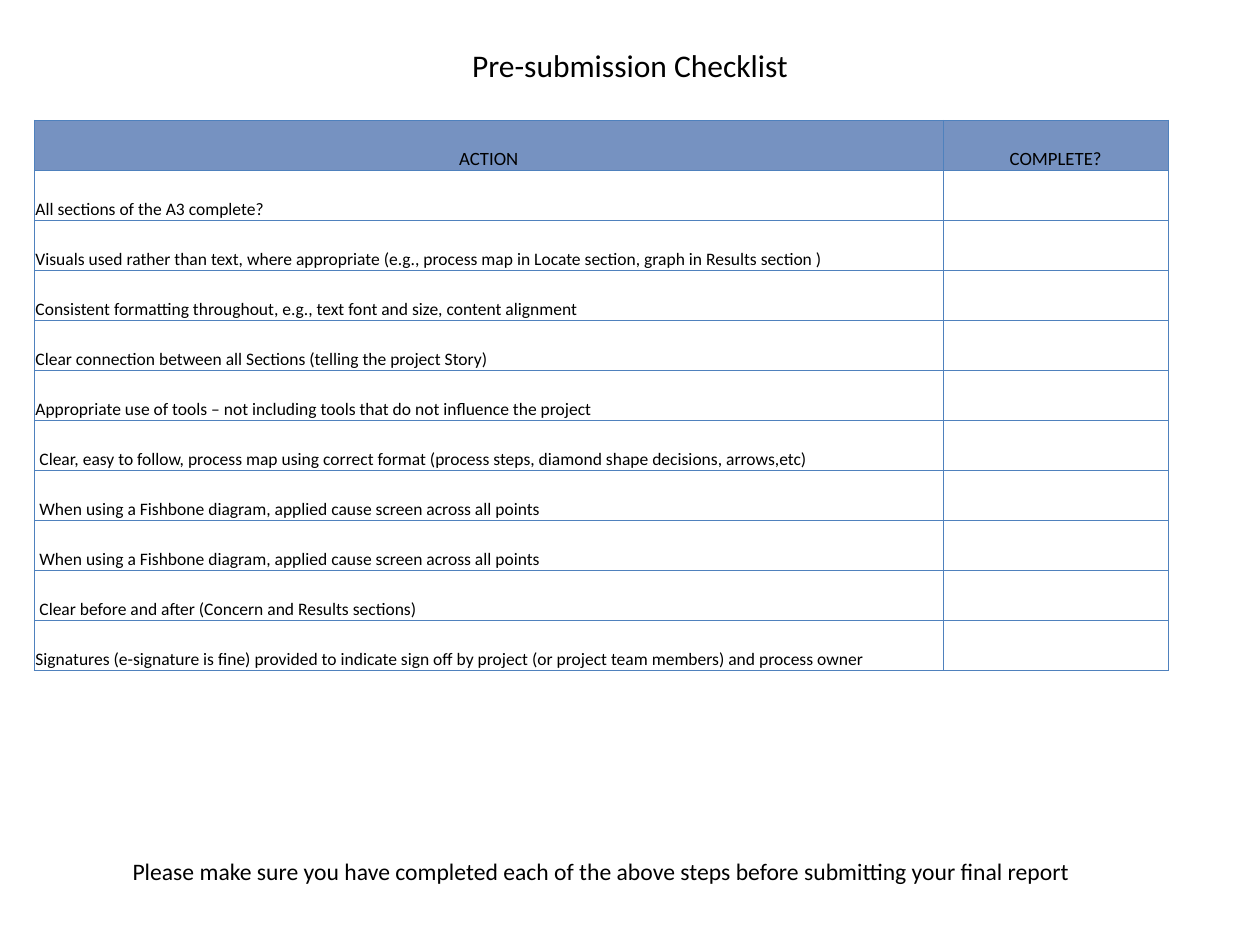
from lxml.etree import SubElement
from pptx import Presentation
from pptx.dml.color import RGBColor
from pptx.enum.text import MSO_ANCHOR, PP_ALIGN
from pptx.oxml.ns import qn
from pptx.util import Cm, Pt

COLORS = {"text": "000000", "header": "7692C1", "border": "4F81BD"}
FONT = "Calibri"
LEFT, WIDTH = 0.97, 32
TABLE_TOP, TABLE_HEIGHT = 3.4, 15.52
COLUMN_WIDTHS = (25.65, 6.35)
HEADERS = ("ACTION", "COMPLETE?")
ACTIONS = (
    "All sections of the A3 complete?",
    "Visuals used rather than text, where appropriate (e.g., process map in Locate section, "
    "graph in Results section )",
    "Consistent formatting throughout, e.g., text font and size, content alignment",
    "Clear connection between all Sections (telling the project Story)",
    "Appropriate use of tools – not including tools that do not influence the project",
    " Clear, easy to follow, process map using correct format (process steps, "
    "diamond shape decisions, arrows,etc)",
    " When using a Fishbone diagram, applied cause screen across all points",
    " When using a Fishbone diagram, applied cause screen across all points",
    " Clear before and after (Concern and Results sections)",
    "Signatures (e-signature is fine) provided to indicate sign off by project "
    "(or project team members) and process owner",
)


def write_text(text_frame, text, size, align=PP_ALIGN.CENTER):
    paragraph = text_frame.paragraphs[0]
    paragraph.alignment = align
    run = paragraph.add_run()
    run.text = text
    run.font.name = FONT
    run.font.size = Pt(size)
    run.font.color.rgb = RGBColor.from_string(COLORS["text"])


def add_text(slide, text, left, top, size):
    shape = slide.shapes.add_textbox(Cm(left), Cm(top), Cm(WIDTH), Cm(1.5))
    text_frame = shape.text_frame
    text_frame.word_wrap = True
    text_frame.vertical_anchor = MSO_ANCHOR.MIDDLE
    text_frame.margin_left = text_frame.margin_right = Cm(0.36)
    text_frame.margin_top = text_frame.margin_bottom = Cm(0.18)
    write_text(text_frame, text, size)


def add_borders(cell, color, width=1):
    properties = cell._tc.get_or_add_tcPr()
    for index, side in enumerate(("a:lnL", "a:lnR", "a:lnT", "a:lnB")):
        line = SubElement(properties, qn(side), w=str(Pt(width)))
        fill = SubElement(line, qn("a:solidFill"))
        SubElement(fill, qn("a:srgbClr"), val=color)
        # Borders must come before the cell fill
        properties.insert(index, line)


def format_cell(cell, text="", size=14, align=PP_ALIGN.LEFT, fill=None):
    cell.vertical_anchor = MSO_ANCHOR.BOTTOM
    cell.margin_left = cell.margin_right = cell.margin_top = Cm(0.03)
    cell.margin_bottom = Cm(0)
    if text:
        write_text(cell.text_frame, text, size, align)
    if fill:
        cell.fill.solid()
        cell.fill.fore_color.rgb = RGBColor.from_string(fill)
    else:
        cell.fill.background()
    add_borders(cell, COLORS["border"])


def add_checklist(slide):
    row_count = len(ACTIONS) + 1
    table = slide.shapes.add_table(
        row_count, len(HEADERS), Cm(LEFT), Cm(TABLE_TOP), Cm(WIDTH), Cm(TABLE_HEIGHT)
    ).table
    table.first_row = table.horz_banding = False
    for column, width in zip(table.columns, COLUMN_WIDTHS):
        column.width = Cm(width)

    # Header row
    for index, header in enumerate(HEADERS):
        format_cell(table.cell(0, index), header, size=15,
                    align=PP_ALIGN.CENTER, fill=COLORS["header"])

    # One row per action, with an empty cell to tick
    for index, action in enumerate(ACTIONS, start=1):
        format_cell(table.cell(index, 0), action)
        format_cell(table.cell(index, 1))


def main():
    presentation = Presentation()
    presentation.slide_width = Cm(35.56)
    presentation.slide_height = Cm(26.67)
    slide = presentation.slides.add_slide(presentation.slide_layouts[6])

    # Title
    add_text(slide, "Pre-submission Checklist", left=1.78, top=1.07, size=25.2)

    # Checklist
    add_checklist(slide)

    # Closing reminder
    add_text(slide, "Please make sure you have completed each of the above steps "
             "before submitting your final report", left=LEFT, top=23.83, size=18.9)

    presentation.save("out.pptx")


if __name__ == "__main__":
    main()
